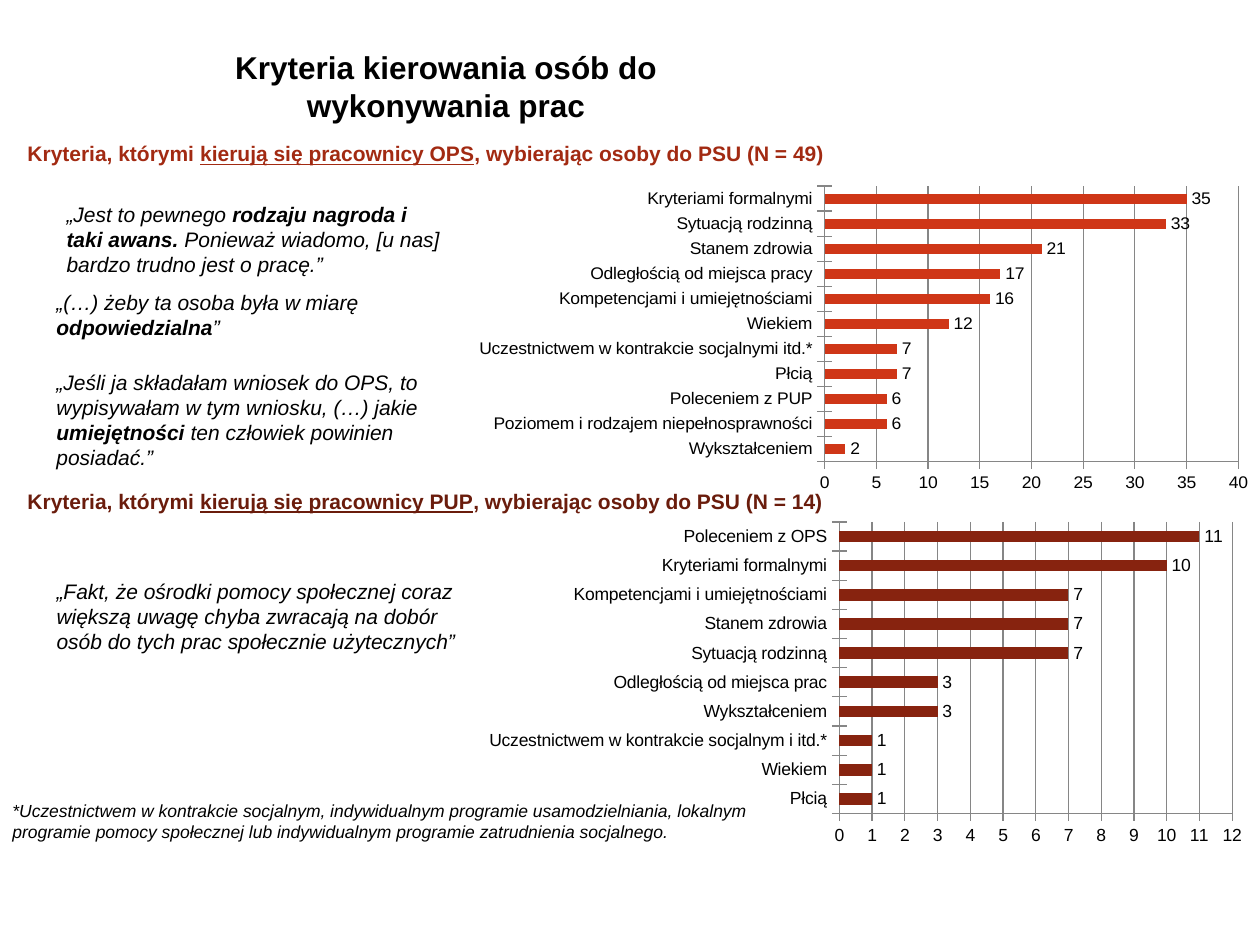
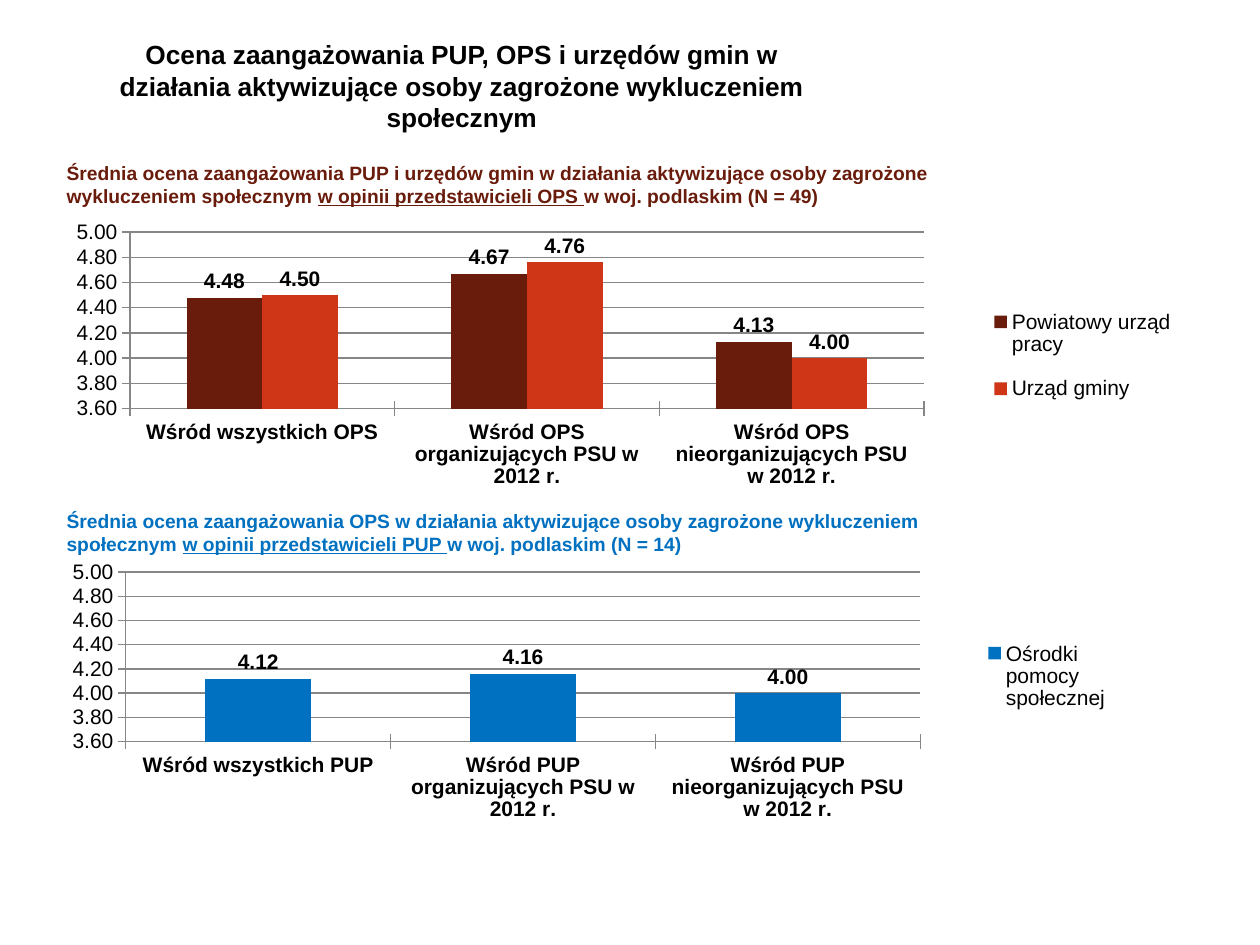
from dataclasses import dataclass

from lxml import etree
from pptx import Presentation
from pptx.chart.data import CategoryChartData
from pptx.dml.color import RGBColor
from pptx.enum import chart as ch, text
from pptx.oxml import ns
from pptx.util import Inches, Pt


@dataclass(frozen=True)
class Theme:
    font: str = "Arial"
    black: str = "000000"
    grid: str = "868686"
    ops_heading: str = "A22A12"
    maroon: str = "6A1C0C"
    red: str = "CF3617"
    brick: str = "87230F"
    blue: str = "0070C0"
    quote_size: int = 12
    heading_size: int = 12
    rating_heading_size: int = 11
    note_size: int = 10
    criteria_size: int = 10
    rating_size: int = 12


THEME = Theme()
TITLE_ONLY = 5
RATING_FORMAT = "#,##0.00"


# Text
def style(font, size, color=THEME.black, bold=False, italic=False):
    font.name = THEME.font
    font.size = Pt(size)
    font.color.rgb = RGBColor.from_string(color)
    font.bold = bold
    font.italic = italic


def add_titled_slide(prs, title, box, size):
    slide = prs.slides.add_slide(prs.slide_layouts[TITLE_ONLY])
    heading = slide.shapes.title
    heading.left, heading.top, heading.width, heading.height = map(Inches, box)
    frame = heading.text_frame
    frame.text = title
    frame.auto_size = text.MSO_AUTO_SIZE.NONE
    frame.vertical_anchor = text.MSO_ANCHOR.MIDDLE
    frame.paragraphs[0].alignment = text.PP_ALIGN.CENTER
    style(frame.paragraphs[0].font, size, bold=True)
    return slide


def add_paragraph_box(slide, box, parts, emphasis=None, anchor=text.MSO_ANCHOR.TOP, **look):
    """Write parts as one paragraph; every second part gets the emphasis."""
    frame = slide.shapes.add_textbox(*map(Inches, box)).text_frame
    frame.word_wrap = True
    frame.vertical_anchor = anchor
    paragraph = frame.paragraphs[0]
    style(paragraph.font, **look)
    for index, part in enumerate(parts):
        run = paragraph.add_run()
        run.text = part
        if index % 2:
            setattr(run.font, emphasis, True)


def add_quote(slide, box, *parts):
    add_paragraph_box(slide, box, parts, "bold", size=THEME.quote_size, italic=True)


def add_heading(slide, box, parts, color, size=THEME.heading_size,
                anchor=text.MSO_ANCHOR.TOP):
    add_paragraph_box(slide, box, parts, "underline", anchor,
                      size=size, color=color, bold=True)


# Charts
def manual_layout(box, inner=False):
    layout = etree.Element(ns.qn("c:layout"))
    manual = etree.SubElement(layout, ns.qn("c:manualLayout"))
    settings = [("layoutTarget", "inner")] if inner else []
    settings += [("xMode", "edge"), ("yMode", "edge"), *zip("xywh", box)]
    for tag, value in settings:
        etree.SubElement(manual, ns.qn(f"c:{tag}")).set("val", str(value))
    return layout


def place_plot(chart, box):
    plot_area = chart.element.find(".//" + ns.qn("c:plotArea"))
    for automatic in plot_area.findall(ns.qn("c:layout")):
        plot_area.remove(automatic)
    plot_area.insert(0, manual_layout(box, inner=True))


def draw_line(line):
    line.color.rgb = RGBColor.from_string(THEME.grid)
    line.width = Pt(0.75)


def add_bar_chart(slide, kind, box, plot_box, categories, series, scale,
                  size, number_format="General", bold=False):
    """series: (name, values, colour) rows; scale: minimum, maximum, step."""
    data = CategoryChartData()
    data.categories = categories
    for name, values, _ in series:
        data.add_series(name, values)
    chart = slide.shapes.add_chart(kind, *map(Inches, box), data).chart
    chart.has_title = False
    chart.has_legend = False
    style(chart.font, size)
    place_plot(chart, plot_box)

    plot = chart.plots[0]
    plot.vary_by_categories = False
    plot.gap_width = 150
    plot.overlap = 0
    for bars, (_, _, color) in zip(plot.series, series):
        bars.invert_if_negative = False
        bars.format.fill.solid()
        bars.format.fill.fore_color.rgb = RGBColor.from_string(color)
        labels = bars.data_labels
        labels.show_value = True
        labels.number_format = number_format
        labels.number_format_is_linked = False
        labels.position = ch.XL_LABEL_POSITION.OUTSIDE_END
        style(labels.font, size, bold=bold)

    for axis in (chart.category_axis, chart.value_axis):
        axis.major_tick_mark = ch.XL_TICK_MARK.CROSS
        axis.minor_tick_mark = ch.XL_TICK_MARK.NONE
        draw_line(axis.format.line)
    style(chart.category_axis.tick_labels.font, size, bold=bold)
    values = chart.value_axis
    values.minimum_scale, values.maximum_scale, values.major_unit = scale
    values.has_major_gridlines = True
    draw_line(values.major_gridlines.format.line)
    values.tick_labels.number_format = number_format
    values.tick_labels.number_format_is_linked = False
    style(values.tick_labels.font, size)
    return chart


def add_criteria_chart(slide, box, plot_box, criteria, color, scale):
    """criteria: label to count, listed from the top bar down."""
    bottom_up = list(criteria.items())[::-1]
    labels, counts = zip(*bottom_up)
    add_bar_chart(slide, ch.XL_CHART_TYPE.BAR_CLUSTERED, box, plot_box, labels,
                  [("Series 1", counts, color)], scale, THEME.criteria_size)


def add_rating_chart(slide, box, plot_box, legend_box, office, series):
    groups = [f"Wśród wszystkich {office}",
              f"Wśród {office} organizujących PSU w 2012 r.",
              f"Wśród {office} nieorganizujących PSU w 2012 r."]
    chart = add_bar_chart(slide, ch.XL_CHART_TYPE.COLUMN_CLUSTERED, box, plot_box,
                          groups, series, (3.6, 5, 0.2), THEME.rating_size,
                          RATING_FORMAT, bold=True)
    chart.has_legend = True
    legend = chart.legend
    legend.position = ch.XL_LEGEND_POSITION.RIGHT
    legend.include_in_layout = False
    style(legend.font, THEME.rating_size)
    for automatic in legend._element.findall(ns.qn("c:layout")):
        legend._element.remove(automatic)
    position = legend._element.find(ns.qn("c:legendPos"))
    position.addnext(manual_layout(legend_box))


# Slides
def build_criteria_slide(prs):
    slide = add_titled_slide(prs, "Kryteria kierowania osób do wykonywania prac",
                             (0.98, 0.36, 5.12, 0.64), 18)

    # Counts for both kinds of office
    add_criteria_chart(slide, (3.66, 1.39, 6.34, 2.52), (0.455, 0.036, 0.518, 0.902), {
        "Kryteriami formalnymi": 35,
        "Sytuacją rodzinną": 33,
        "Stanem zdrowia": 21,
        "Odległością od miejsca pracy": 17,
        "Kompetencjami i umiejętnościami": 16,
        "Wiekiem": 12,
        "Uczestnictwem w kontrakcie socjalnymi itd.*": 7,
        "Płcią": 7,
        "Poleceniem z PUP": 6,
        "Poziomem i rodzajem niepełnosprawności": 6,
        "Wykształceniem": 2,
    }, THEME.red, (0, 40, 5))
    add_criteria_chart(slide, (3.35, 3.99, 6.65, 2.92), (0.498, 0.052, 0.469, 0.793), {
        "Poleceniem z OPS": 11,
        "Kryteriami formalnymi": 10,
        "Kompetencjami i umiejętnościami": 7,
        "Stanem zdrowia": 7,
        "Sytuacją rodzinną": 7,
        "Odległością od miejsca prac": 3,
        "Wykształceniem": 3,
        "Uczestnictwem w kontrakcie socjalnym i itd.*": 1,
        "Wiekiem": 1,
        "Płcią": 1,
    }, THEME.brick, (0, 12, 1))

    # Headings above the charts
    for office, count, top, width, color in (("OPS", 49, 1.07, 7.5, THEME.ops_heading),
                                             ("PUP", 14, 3.83, 6.54, THEME.maroon)):
        add_heading(slide, (0.12, top, width, 0.3),
                    ("Kryteria, którymi ", f"kierują się pracownicy {office}",
                     f", wybierając osoby do PSU (N = {count})"), color)

    # Quotes from interviews
    add_quote(slide, (0.43, 1.55, 3.23, 0.71), "„Jest to pewnego ",
              "rodzaju nagroda i taki awans.",
              " Ponieważ wiadomo, [u nas] bardzo trudno jest o pracę.”")
    add_quote(slide, (0.35, 2.25, 3.36, 0.5), "„(…) żeby ta osoba była w miarę ",
              "odpowiedzialna", "”")
    add_quote(slide, (0.35, 2.88, 3.1, 0.91),
              "„Jeśli ja składałam wniosek do OPS, to wypisywałam w tym wniosku, (…) jakie ",
              "umiejętności", " ten człowiek powinien posiadać.”")
    add_quote(slide, (0.35, 4.54, 3.39, 0.71),
              "„Fakt, że ośrodki pomocy społecznej coraz większą uwagę chyba zwracają "
              "na dobór osób do tych prac społecznie użytecznych”")

    # Footnote
    add_paragraph_box(slide, (0, 6.3, 6.02, 0.44), [
        "*Uczestnictwem w kontrakcie socjalnym, indywidualnym programie "
        "usamodzielniania, lokalnym programie pomocy społecznej lub indywidualnym "
        "programie zatrudnienia socjalnego."], size=THEME.note_size, italic=True)


def build_rating_slide(prs):
    slide = add_titled_slide(
        prs, "Ocena zaangażowania PUP, OPS i urzędów gmin w działania aktywizujące "
        "osoby zagrożone wykluczeniem społecznym", (0.75, 0.36, 5.83, 0.64), 15)

    # Average ratings
    add_rating_chart(slide, (0.51, 1.7, 8.98, 2.36), (0.058, 0.06, 0.702, 0.594),
                     (0.81, 0.25, 0.18, 0.45), "OPS",
                     [("Powiatowy urząd pracy", (4.48, 4.67, 4.13), THEME.maroon),
                      ("Urząd gminy", (4.5, 4.76, 4), THEME.red)])
    add_rating_chart(slide, (0.51, 4.22, 8.43, 2.52), (0.058, 0.127, 0.748, 0.534),
                     (0.86, 0.32, 0.13, 0.27), "PUP",
                     [("Ośrodki pomocy społecznej", (4.12, 4.16, 4), THEME.blue)])

    # Headings above the charts
    for rated, judge, count, top, width, color in (
            ("PUP i urzędów gmin", "OPS", 49, 1.23, 7.91, THEME.maroon),
            ("OPS", "PUP", 14, 3.99, 7.17, THEME.blue)):
        add_heading(slide, (0.43, top, width, 0.47),
                    (f"Średnia ocena zaangażowania {rated} w działania aktywizujące "
                     "osoby zagrożone wykluczeniem społecznym ",
                     f"w opinii przedstawicieli {judge} ",
                     f"w woj. podlaskim (N = {count})"),
                    color, THEME.rating_heading_size, text.MSO_ANCHOR.MIDDLE)


def main():
    prs = Presentation()
    prs.slide_width, prs.slide_height = Inches(10), Inches(7.5)
    build_criteria_slide(prs)
    build_rating_slide(prs)
    prs.save("out.pptx")


if __name__ == "__main__":
    main()
